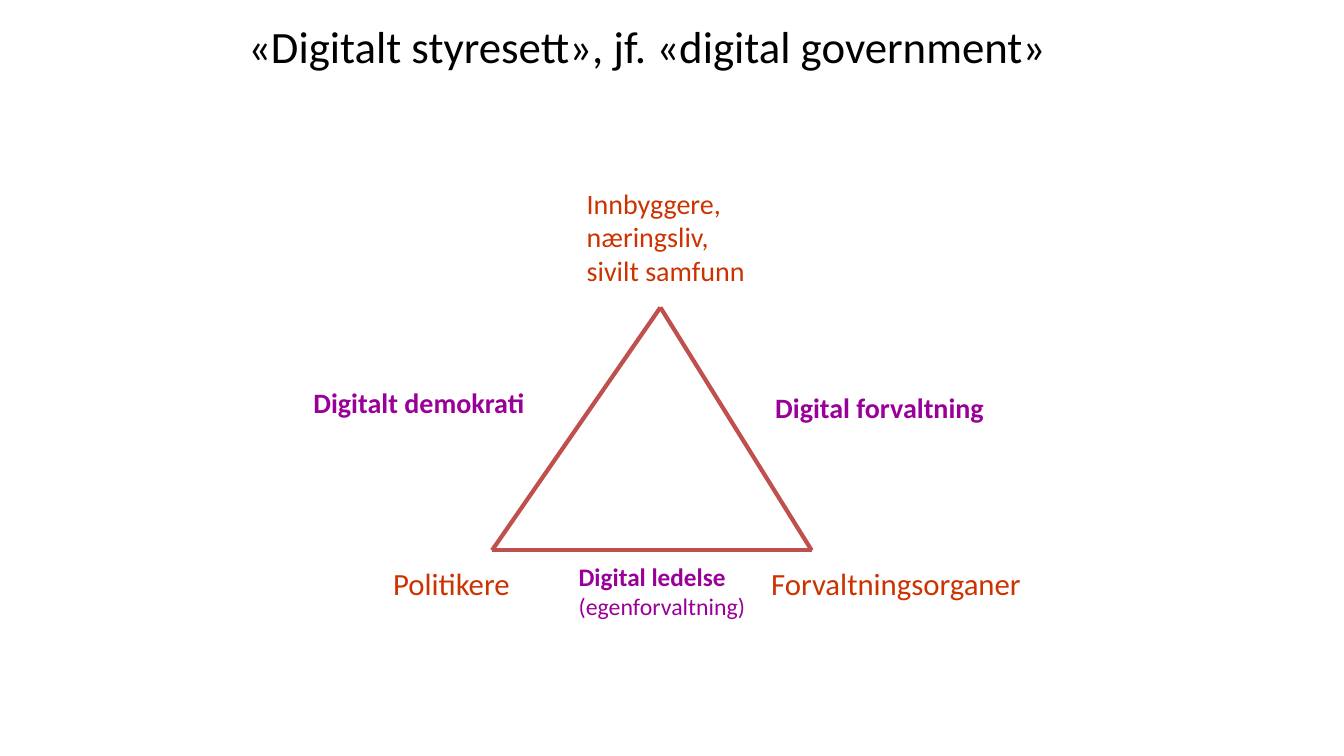
from typing import NamedTuple

import pptx
import pptx.dml.color
import pptx.enum.shapes
import pptx.enum.text
import pptx.oxml.ns
import pptx.util
from pptx.util import Inches

FONT = "Calibri"
BLACK, ORANGE, PURPLE, RED = "000000", "CC3300", "990099", "C0504D"


class Line(NamedTuple):
    text: str
    size: float
    color: str
    bold: bool = False


class Label(NamedTuple):
    left: float
    top: float
    width: float
    height: float
    lines: list[Line]
    wrap: bool = False


def rgb(value: str) -> pptx.dml.color.RGBColor:
    return pptx.dml.color.RGBColor.from_string(value)


def fill_label(sp, label: Label) -> None:
    """Place a text shape and write its lines."""
    sp.left, sp.top = Inches(label.left), Inches(label.top)
    sp.width, sp.height = Inches(label.width), Inches(label.height)
    tf = sp.text_frame
    tf.word_wrap = label.wrap
    tf.auto_size = pptx.enum.text.MSO_AUTO_SIZE.SHAPE_TO_FIT_TEXT
    tf.vertical_anchor = pptx.enum.text.MSO_ANCHOR.TOP
    for i, line in enumerate(label.lines):
        p = tf.add_paragraph() if i else tf.paragraphs[0]
        p.alignment = pptx.enum.text.PP_ALIGN.LEFT
        r = p.add_run()
        r.text = line.text
        r.font.name = FONT
        r.font.size = pptx.util.Pt(line.size)
        r.font.bold = line.bold
        r.font.color.rgb = rgb(line.color)


def add_side(s, start: tuple[float, float], end: tuple[float, float]) -> None:
    """Draw one side of the triangle."""
    sp = s.shapes.add_connector(
        pptx.enum.shapes.MSO_CONNECTOR.STRAIGHT, *map(Inches, start + end))
    sp.line.color.rgb = rgb(RED)
    sp.line.width = pptx.util.Pt(3)
    sp._element.spPr.append(pptx.oxml.parse_xml(
        f'<a:effectLst {pptx.oxml.ns.nsdecls("a")}/>'))


TITLE = Label(2.36, 0.14, 8.21, 0.64, [
    Line("«Digitalt styresett», jf. «digital government»", 32, BLACK)])

# Triangle corners
POLITICIANS, CITIZENS, AGENCIES = (4.88, 5.46), (6.55, 3.05), (8.05, 5.46)
SIDES = [(POLITICIANS, CITIZENS), (CITIZENS, AGENCIES), (POLITICIANS, AGENCIES)]

LABELS = [
    # Actors at the corners
    Label(5.72, 1.8, 1.78, 1.1, [
        Line(text, 20, ORANGE)
        for text in ("Innbyggere,", "næringsliv,", "sivilt samfunn")]),
    Label(3.8, 5.55, 1.39, 0.47, [Line("Politikere", 22, ORANGE)]),
    Label(7.55, 5.55, 2.68, 0.47, [Line("Forvaltningsorganer", 22, ORANGE)]),
    # Relations along the sides
    Label(7.59, 3.82, 2.29, 0.44, [Line("Digital forvaltning", 20, PURPLE, True)]),
    Label(3.01, 3.78, 2.31, 0.44, [Line("Digitalt demokrati", 20, PURPLE, True)]),
    Label(5.64, 5.52, 1.85, 0.69, [
        Line("Digital ledelse", 18, PURPLE, True),
        Line("(egenforvaltning)", 17, PURPLE)], wrap=True),
]


def main() -> None:
    prs = pptx.Presentation()
    prs.slide_width, prs.slide_height = Inches(13.33), Inches(7.5)
    s = prs.slides.add_slide(prs.slide_layouts[5])

    # Title
    fill_label(s.shapes.title, TITLE)

    # Triangle
    for start, end in SIDES:
        add_side(s, start, end)

    # Labels
    for label in LABELS:
        fill_label(s.shapes.add_textbox(0, 0, 0, 0), label)

    prs.save("out.pptx")


if __name__ == "__main__":
    main()
